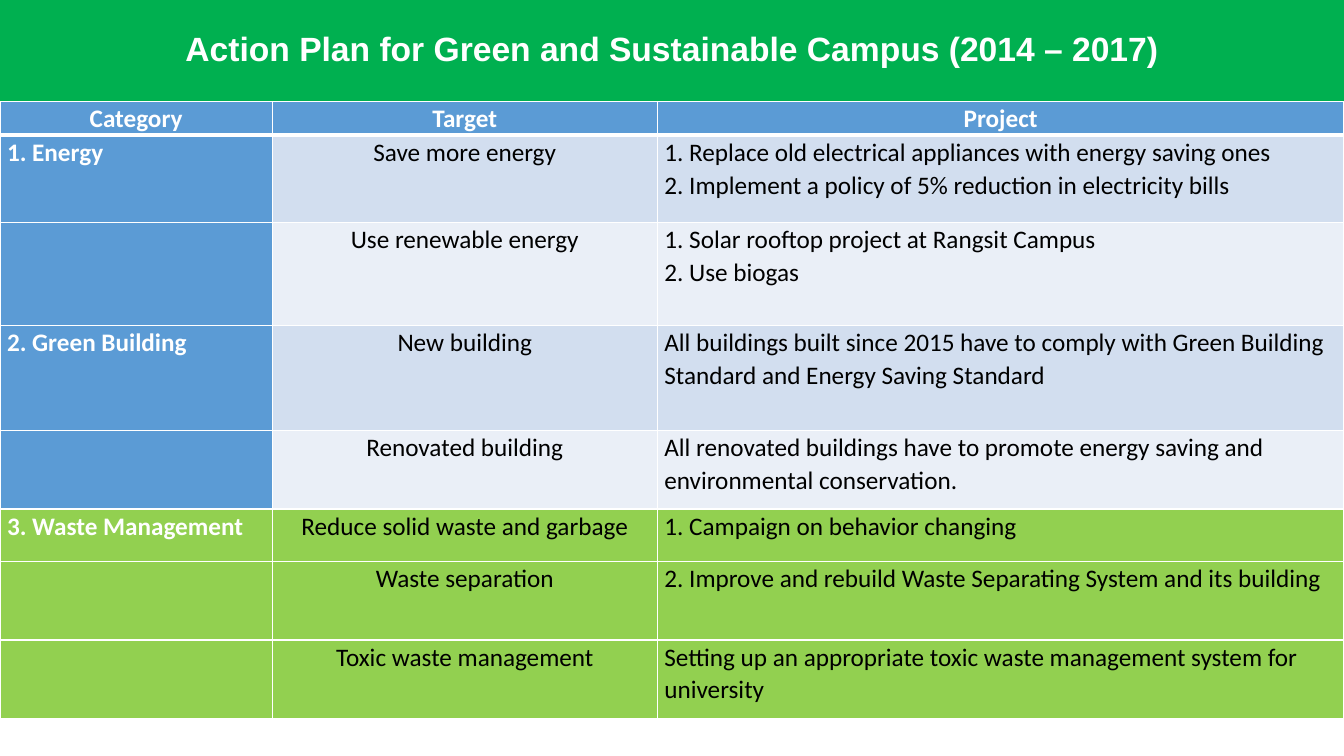
"""Build the campus action plan slide: a title band above a plan table."""
from dataclasses import dataclass

from lxml import etree
from pptx import Presentation
from pptx.dml.color import RGBColor
from pptx.enum.shapes import MSO_SHAPE
from pptx.enum.text import MSO_ANCHOR, PP_ALIGN
from pptx.oxml.ns import qn
from pptx.slide import Slide
from pptx.table import _Cell
from pptx.text.text import TextFrame
from pptx.util import Inches, Pt

RECTANGLE = MSO_SHAPE.RECTANGLE
MIDDLE = MSO_ANCHOR.MIDDLE
LEFT, CENTER = PP_ALIGN.LEFT, PP_ALIGN.CENTER


@dataclass(frozen=True)
class Theme:
    """Colours, fonts and sizes of the slide."""
    band: str = "00B050"
    blue: str = "5B9BD5"
    pale_blue: str = "D2DEEF"
    paler_blue: str = "EAEFF7"
    green: str = "92D050"
    white: str = "FFFFFF"
    black: str = "000000"
    title_font: str = "Arial"
    table_font: str = "Calibri"
    title_size: int = 24
    table_size: int = 18
    title_spacing: float = 0.9
    table_spacing: float = 1.07
    thin: int = 1
    thick: int = 3


@dataclass(frozen=True)
class PlanRow:
    """One target of the plan with its projects."""
    category: str
    target: str
    project: str
    height: float
    category_fill: str
    fill: str


THEME = Theme()
SLIDE_WIDTH, SLIDE_HEIGHT = 13.33, 7.5
BAND_HEIGHT = 1.01
HEADER_HEIGHT = 0.33
CELL_INSET = 0.07
COLUMN_WIDTHS = (2.7, 3.82, 6.81)
TITLE = "Action Plan for Green and Sustainable Campus (2014 – 2017)"
HEADINGS = ("Category", "Target", "Project")
PLAN = (
    PlanRow("1. Energy", "Save more energy",
            "1. Replace old electrical appliances with energy saving ones\n"
            "2. Implement a policy of 5% reduction in electricity bills",
            0.87, THEME.blue, THEME.pale_blue),
    PlanRow("", "Use renewable energy",
            "1. Solar rooftop project at Rangsit Campus\n2. Use biogas",
            1.02, THEME.blue, THEME.paler_blue),
    PlanRow("2. Green Building", "New building",
            "All buildings built since 2015 have to comply with Green Building "
            "Standard and Energy Saving Standard",
            1.04, THEME.blue, THEME.pale_blue),
    PlanRow("", "Renovated building",
            "All renovated buildings have to promote energy saving and "
            "environmental conservation.",
            0.78, THEME.blue, THEME.paler_blue),
    PlanRow("3. Waste Management", "Reduce solid waste and garbage",
            "1. Campaign on behavior changing",
            0.52, THEME.green, THEME.green),
    PlanRow("", "Waste separation",
            "2. Improve and rebuild Waste Separating System and its building",
            0.78, THEME.green, THEME.green),
    PlanRow("", "Toxic waste management",
            "Setting up an appropriate toxic waste management system for university",
            0.78, THEME.green, THEME.green),
)


def write_text(frame: TextFrame, text: str, *, color: str, bold: bool = False,
               align: PP_ALIGN = LEFT, font: str = THEME.table_font,
               size: int = THEME.table_size,
               spacing: float = THEME.table_spacing) -> None:
    """Fill a text frame, one paragraph a line, in a single format."""
    frame.text = text
    for paragraph in frame.paragraphs:
        paragraph.alignment = align
        paragraph.line_spacing = spacing
        paragraph.font.size = Pt(size)
        for run in paragraph.runs:
            run.font.name = font
            run.font.size = Pt(size)
            run.font.bold = bold
            run.font.color.rgb = RGBColor.from_string(color)


def draw_borders(cell: _Cell, top: int, bottom: int) -> None:
    """Give a cell white borders, with top and bottom widths in points."""
    properties = cell._tc.get_or_add_tcPr()
    widths = {"lnL": THEME.thin, "lnR": THEME.thin, "lnT": top, "lnB": bottom}
    for position, (side, width) in enumerate(widths.items()):
        line = etree.Element(qn(f"a:{side}"), w=str(Pt(width)))
        fill = etree.SubElement(line, qn("a:solidFill"))
        etree.SubElement(fill, qn("a:srgbClr"), val=THEME.white)
        properties.insert(position, line)


def fill_cell(cell: _Cell, text: str, fill: str, *, color: str,
              bold: bool = False, align: PP_ALIGN = LEFT,
              top: int = THEME.thin, bottom: int = THEME.thin) -> None:
    """Set the text, fill, insets and borders of a table cell."""
    cell.margin_left = cell.margin_right = Inches(CELL_INSET)
    cell.margin_top = cell.margin_bottom = 0
    cell.fill.solid()
    cell.fill.fore_color.rgb = RGBColor.from_string(fill)
    draw_borders(cell, top, bottom)
    write_text(cell.text_frame, text, color=color, bold=bold, align=align)


def add_title_band(slide: Slide) -> None:
    """Draw the green band with the slide title."""
    band = slide.shapes.add_shape(RECTANGLE, 0, 0, Inches(SLIDE_WIDTH),
                                  Inches(BAND_HEIGHT))
    band.shadow.inherit = False
    band.fill.solid()
    band.fill.fore_color.rgb = RGBColor.from_string(THEME.band)
    band.line.fill.background()
    band.text_frame.word_wrap = True
    band.text_frame.vertical_anchor = MIDDLE
    write_text(band.text_frame, TITLE, color=THEME.white, bold=True,
               align=CENTER, font=THEME.title_font, size=THEME.title_size,
               spacing=THEME.title_spacing)


def add_plan_table(slide: Slide) -> None:
    """Draw the table of categories, targets and projects."""
    heights = (HEADER_HEIGHT, *(row.height for row in PLAN))
    table = slide.shapes.add_table(
        len(heights), len(HEADINGS), 0, Inches(BAND_HEIGHT),
        Inches(SLIDE_WIDTH), Inches(sum(heights))).table
    for column, width in zip(table.columns, COLUMN_WIDTHS):
        column.width = Inches(width)
    for table_row, height in zip(table.rows, heights):
        table_row.height = Inches(height)

    for index, heading in enumerate(HEADINGS):
        fill_cell(table.cell(0, index), heading, THEME.blue, color=THEME.white,
                  bold=True, align=CENTER, bottom=THEME.thick)
    for index, row in enumerate(PLAN, start=1):
        top = THEME.thick if index == 1 else THEME.thin
        fill_cell(table.cell(index, 0), row.category, row.category_fill,
                  color=THEME.white, bold=True, top=top)
        fill_cell(table.cell(index, 1), row.target, row.fill,
                  color=THEME.black, align=CENTER, top=top)
        fill_cell(table.cell(index, 2), row.project, row.fill,
                  color=THEME.black, top=top)


def main() -> None:
    """Build and save the presentation."""
    presentation = Presentation()
    presentation.slide_width = Inches(SLIDE_WIDTH)
    presentation.slide_height = Inches(SLIDE_HEIGHT)
    slide = presentation.slides.add_slide(presentation.slide_layouts[6])
    add_title_band(slide)
    add_plan_table(slide)
    presentation.save("out.pptx")


if __name__ == "__main__":
    main()
